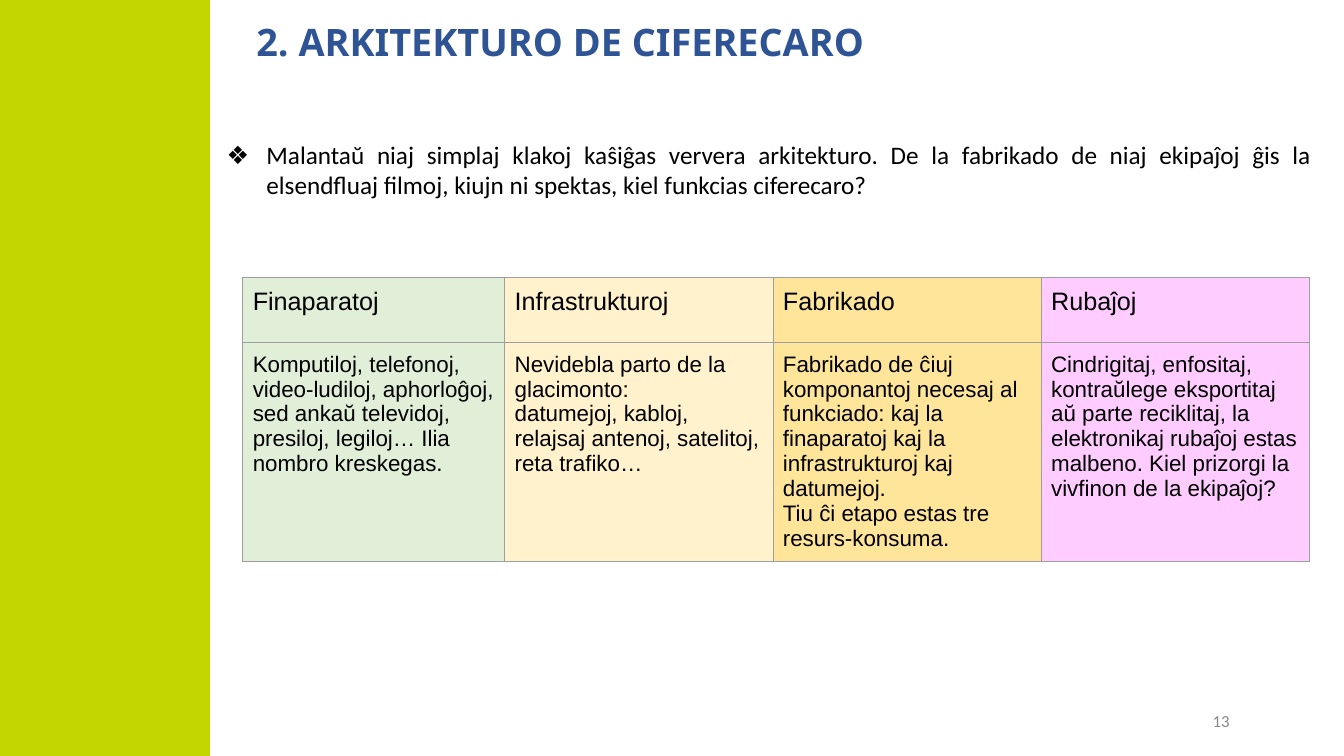
from lxml.etree import SubElement
from pptx import Presentation
from pptx.dml.color import RGBColor
from pptx.enum.shapes import MSO_SHAPE
from pptx.enum.text import MSO_ANCHOR, MSO_AUTO_SIZE, PP_ALIGN
from pptx.oxml.ns import qn
from pptx.util import Cm, Pt

LIME = RGBColor(0xC4, 0xD6, 0x00)
BLUE = RGBColor(0x2F, 0x54, 0x96)
BLACK = RGBColor(0x00, 0x00, 0x00)
GREY = RGBColor(0x88, 0x88, 0x88)
BORDER = RGBColor(0x9E, 0x9E, 0x9E)
GREEN = RGBColor(0xE1, 0xEF, 0xD8)
CREAM = RGBColor(0xFF, 0xF2, 0xCC)
GOLD = RGBColor(0xFE, 0xE5, 0x99)
PINK = RGBColor(0xFF, 0xCC, 0xFF)

TITLE = "2. ARKITEKTURO DE CIFERECARO"
INTRODUCTION = (
    "Malantaŭ niaj simplaj klakoj kaŝiĝas ververa arkitekturo. De la fabrikado de niaj "
    "ekipaĵoj ĝis la elsendfluaj filmoj, kiujn ni spektas, kiel funkcias ciferecaro?"
)
COLUMNS = [
    ("Finaparatoj", GREEN, 6.6, [
        "Komputiloj, telefonoj, video-ludiloj, aphorloĝoj, sed ankaŭ televidoj, "
        "presiloj, legiloj… Ilia nombro kreskegas.",
    ]),
    ("Infrastrukturoj", CREAM, 6.76, [
        "Nevidebla parto de la glacimonto:",
        "datumejoj, kabloj, relajsaj antenoj, satelitoj, reta trafiko…",
    ]),
    ("Fabrikado", GOLD, 6.76, [
        "Fabrikado de ĉiuj komponantoj necesaj al funkciado: kaj la finaparatoj "
        "kaj la infrastrukturoj kaj datumejoj.",
        "Tiu ĉi etapo estas tre resurs-konsuma.",
    ]),
    ("Rubaĵoj", PINK, 6.76, [
        "Cindrigitaj, enfositaj, kontraŭlege eksportitaj aŭ parte reciklitaj, la "
        "elektronikaj rubaĵoj estas malbeno. Kiel prizorgi la vivfinon de la ekipaĵoj?",
    ]),
]
ROW_HEIGHTS = [1.63, 5.54]
PAGE_NUMBER = "13"


def write_text(frame, lines, font="Arial", size=16, color=BLACK, bold=False,
               align=PP_ALIGN.LEFT, spacing=None):
    for index, line in enumerate(lines):
        paragraph = frame.add_paragraph() if index else frame.paragraphs[0]
        paragraph.alignment = align
        paragraph.space_before = Pt(0)
        if spacing:
            paragraph.line_spacing = spacing
        run = paragraph.add_run()
        run.text = line
        run.font.name = font
        run.font.size = Pt(size)
        run.font.bold = bold
        run.font.color.rgb = color


def prepare_frame(shape, left, top, width, height, anchor):
    shape.left, shape.top = Cm(left), Cm(top)
    shape.width, shape.height = Cm(width), Cm(height)
    frame = shape.text_frame
    frame.word_wrap = True
    frame.auto_size = MSO_AUTO_SIZE.NONE
    frame.vertical_anchor = anchor
    return frame


def add_bullet(paragraph, character, indent):
    properties = paragraph._p.get_or_add_pPr()
    properties.set("marL", str(Cm(indent)))
    properties.set("indent", str(-Cm(indent)))
    color = SubElement(properties, qn("a:buClr"))
    SubElement(color, qn("a:srgbClr"), val=str(BLACK))
    SubElement(properties, qn("a:buFont"), typeface="Noto Sans")
    SubElement(properties, qn("a:buChar"), char=character)


def add_borders(cell):
    properties = cell._tc.get_or_add_tcPr()
    for side in ("lnL", "lnR", "lnT", "lnB"):
        line = SubElement(properties, qn("a:" + side), w=str(Pt(0.75)))
        fill = SubElement(line, qn("a:solidFill"))
        SubElement(fill, qn("a:srgbClr"), val=str(BORDER))


def add_band(slide, height):
    band = slide.shapes.add_shape(MSO_SHAPE.RECTANGLE, 0, 0, Cm(5.28), height)
    band.shadow.inherit = False
    band.fill.solid()
    band.fill.fore_color.rgb = LIME
    band.line.color.rgb = LIME
    band.line.width = Pt(1)


def add_architecture_table(slide):
    total_width = sum(column[2] for column in COLUMNS)
    table = slide.shapes.add_table(
        len(ROW_HEIGHTS), len(COLUMNS), Cm(6.12), Cm(6.99),
        Cm(total_width), Cm(sum(ROW_HEIGHTS))
    ).table
    table.first_row = False
    table.horz_banding = False
    for row, height in zip(table.rows, ROW_HEIGHTS):
        row.height = Cm(height)
    for column, (heading, color, width, lines) in enumerate(COLUMNS):
        table.columns[column].width = Cm(width)
        for row, (content, size) in enumerate([([heading], 18), (lines, 16)]):
            cell = table.cell(row, column)
            cell.margin_left = cell.margin_right = Cm(0.25)
            cell.margin_top = cell.margin_bottom = Cm(0.25)
            add_borders(cell)
            cell.fill.solid()
            cell.fill.fore_color.rgb = color
            write_text(cell.text_frame, content, size=size)


def main():
    presentation = Presentation()
    presentation.slide_width = Cm(33.87)
    presentation.slide_height = Cm(19.05)
    slide = presentation.slides.add_slide(presentation.slide_layouts[1])
    add_band(slide, presentation.slide_height)

    title = prepare_frame(slide.shapes.title, 5.46, 0.1, 28.14, 2.03, MSO_ANCHOR.MIDDLE)
    title.margin_left, title.margin_right = Cm(1), Cm(1.5)
    write_text(title, [TITLE], font="Noto Sans", size=27, color=BLUE, bold=True, spacing=0.9)

    body = prepare_frame(slide.placeholders[1], 5.46, 3.38, 27.84, 14.76, MSO_ANCHOR.TOP)
    write_text(body, [INTRODUCTION], font="Calibri", size=18, align=PP_ALIGN.JUSTIFY)
    add_bullet(body.paragraphs[0], "❖", 1)

    add_architecture_table(slide)

    number_box = slide.shapes.add_textbox(0, 0, 0, 0)
    number = prepare_frame(number_box, 23.62, 17.65, 7.62, 1.02, MSO_ANCHOR.MIDDLE)
    write_text(number, [PAGE_NUMBER], font="Calibri", size=12, color=GREY,
               align=PP_ALIGN.RIGHT)
    presentation.save("out.pptx")


if __name__ == "__main__":
    main()
